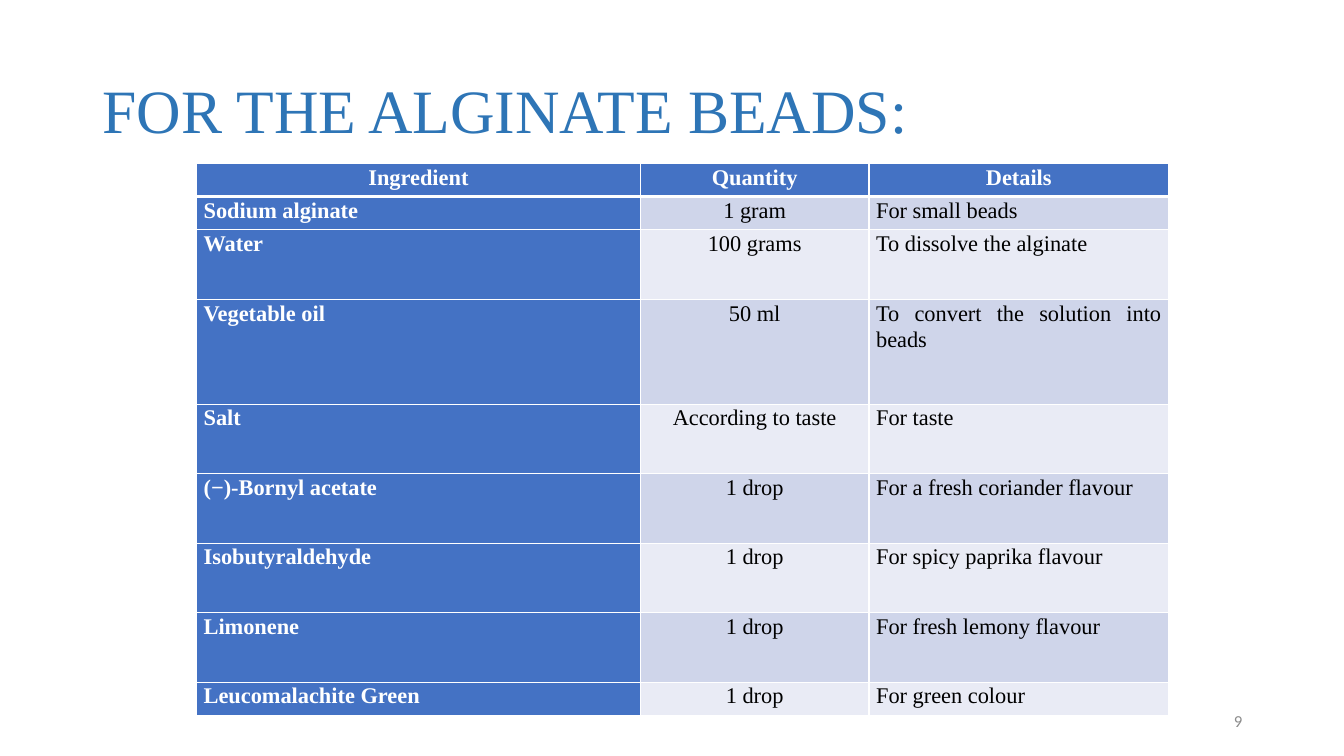
from lxml import etree
from pptx import Presentation
from pptx.dml.color import RGBColor
from pptx.enum.text import MSO_ANCHOR, PP_ALIGN
from pptx.oxml.ns import qn
from pptx.util import Pt

LEFT, MID, RIGHT, JUST = PP_ALIGN.LEFT, PP_ALIGN.CENTER, PP_ALIGN.RIGHT, PP_ALIGN.JUSTIFY
CENTRE = MSO_ANCHOR.MIDDLE
SCALE = 9144  # EMU in one px, 100 px to the inch
COLOURS = {"title": "2E75B6", "head": "4472C4", "odd": "CFD5EA", "even": "E9EBF5",
           "white": "FFFFFF", "black": "000000", "grey": "8C8C8C"}
SERIF, SANS = "Times New Roman", "Calibri"

COLS = [440, 227, 297]
ROWS = [33, 33, 69, 104, 69, 69, 69, 69, 33]
BEADS = [
    ("Ingredient", "Quantity", "Details"),
    ("Sodium alginate", "1 gram", "For small beads"),
    ("Water", "100 grams", "To dissolve the alginate"),
    ("Vegetable oil", "50 ml", "To convert the solution into beads"),
    ("Salt", "According to taste", "For taste"),
    ("(−)-Bornyl acetate", "1 drop", "For a fresh coriander flavour"),
    ("Isobutyraldehyde", "1 drop", "For spicy paprika flavour"),
    ("Limonene", "1 drop", "For fresh lemony flavour"),
    ("Leucomalachite Green", "1 drop", "For green colour"),
]


def px(count):
    return count * SCALE


def rgb(name):
    return RGBColor.from_string(COLOURS[name])


class Deck:
    def __init__(self, wide, high):
        self.prs = Presentation()
        self.prs.slide_width, self.prs.slide_height = px(wide), px(high)
        self.slide = self.prs.slides.add_slide(self.prs.slide_layouts[6])

    def label(self, frame, text, colour, font, para):
        line = frame.paragraphs[0]
        run = line.add_run()
        run.text = text
        run.font.color.rgb = rgb(colour)
        for target, style in ((run.font, font), (line, para)):
            for name, value in style.items():
                setattr(target, name, value)

    def text(self, box, text, colour, font, para):
        frame = self.slide.shapes.add_textbox(*map(px, box)).text_frame
        frame.word_wrap = True
        frame.vertical_anchor = CENTRE
        self.label(frame, text, colour, font, para)

    def edge(self, cell, widths):
        """Draw white borders, given in points for left, right, top, bottom."""
        props = cell._tc.get_or_add_tcPr()
        for side, width in zip("LRTB", widths):
            line = etree.SubElement(props, qn(f"a:ln{side}"), w=str(Pt(width)))
            fill = etree.SubElement(line, qn("a:solidFill"))
            etree.SubElement(fill, qn("a:srgbClr"), val=COLOURS["white"])

    def table(self, left, top, cols, rows, data):
        box = map(px, (left, top, sum(cols), sum(rows)))
        grid = self.slide.shapes.add_table(len(rows), len(cols), *box).table
        grid.first_col = True
        for col, width in zip(grid.columns, cols):
            col.width = px(width)
        for row, high in zip(grid.rows, rows):
            row.height = px(high)
        for r, texts in enumerate(data):
            for c, text in enumerate(texts):
                self.cell(grid.cell(r, c), r, c, text)

    def cell(self, cell, r, c, text):
        head = r == 0 or c == 0
        cell.margin_left = cell.margin_right = px(7)
        cell.margin_top = cell.margin_bottom = 0
        self.edge(cell, (1, 1, 3 if r == 1 else 1, 3 if r == 0 else 1))
        cell.fill.solid()
        cell.fill.fore_color.rgb = rgb("head" if head else "odd" if r % 2 else "even")
        self.label(cell.text_frame, text, "white" if head else "black",
                   {"name": SERIF, "size": Pt(16), "bold": head},
                   {"alignment": MID if r == 0 or c == 1 else JUST,
                    "line_spacing": 1.07, "space_after": Pt(8)})


def main():
    deck = Deck(1333, 750)
    deck.text((92, 40, 1150, 145), "FOR THE ALGINATE BEADS:", "title",
              {"name": SERIF, "size": Pt(44)}, {"alignment": LEFT, "line_spacing": 0.9})
    deck.table(195, 162, COLS, ROWS, BEADS)
    deck.text((942, 695, 300, 40), "9", "grey",
              {"name": SANS, "size": Pt(12)}, {"alignment": RIGHT})
    deck.prs.save("out.pptx")


if __name__ == "__main__":
    main()
